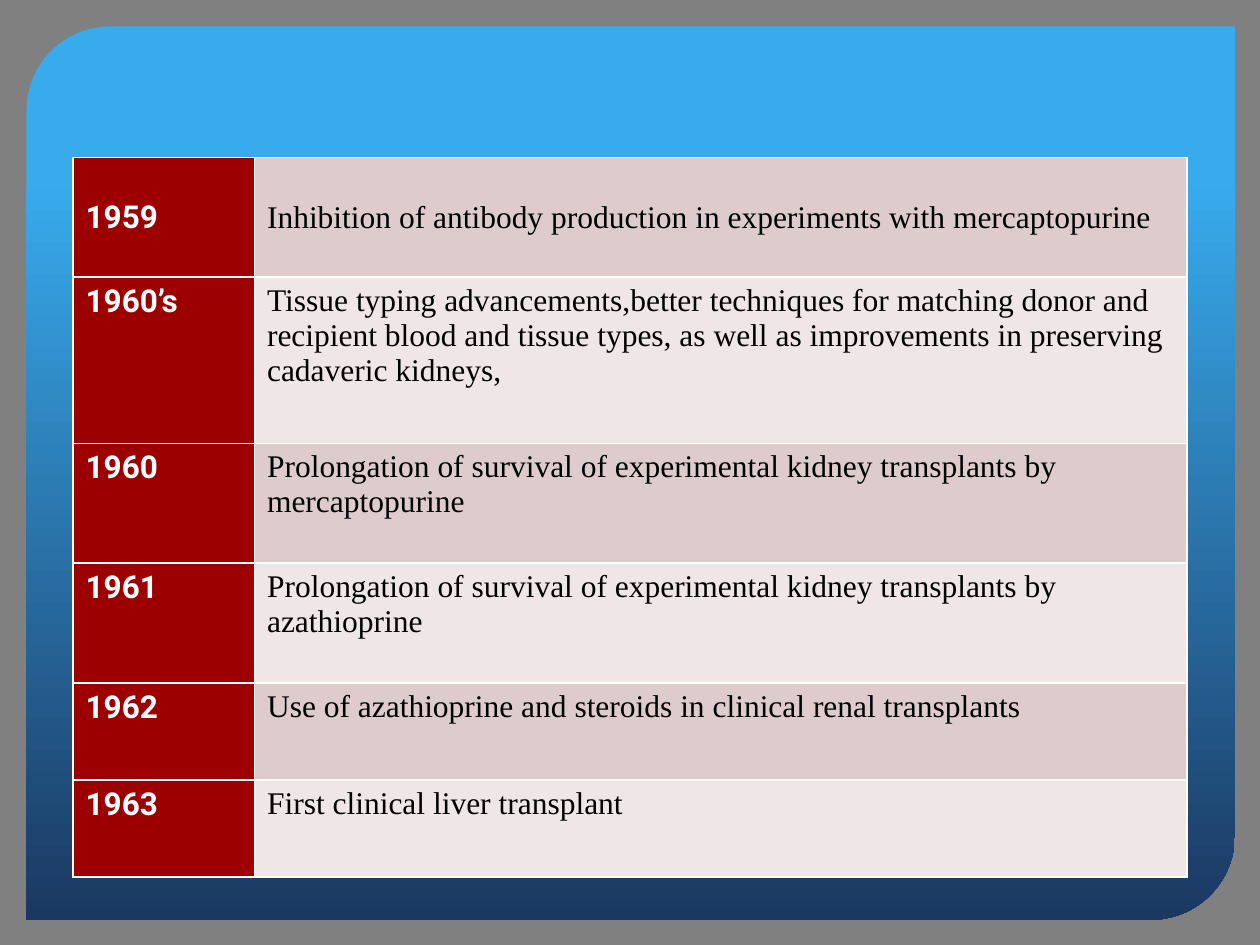
from lxml.etree import SubElement
from pptx import Presentation
from pptx.dml.color import RGBColor
from pptx.enum.shapes import MSO_SHAPE as Shape
from pptx.enum.text import MSO_ANCHOR as Anchor
from pptx.oxml.ns import qn
from pptx.util import Inches, Pt

EVENTS = [
    ("1959", "Inhibition of antibody production in experiments with mercaptopurine", 0.95),
    ("1960’s", "Tissue typing advancements,better techniques for matching donor and "
     "recipient blood and tissue types, as well as improvements in preserving "
     "cadaveric kidneys,", 1.32),
    ("1960", "Prolongation of survival of experimental kidney transplants by mercaptopurine", 0.95),
    ("1961", "Prolongation of survival of experimental kidney transplants by azathioprine", 0.95),
    ("1962", "Use of azathioprine and steroids in clinical renal transplants", 0.77),
    ("1963", "First clinical liver transplant", 0.77),
]
YEAR_WIDTH = 1.44
YEAR_FILL = "9C0001"
BAND_FILLS = ("DECCCC", "EFE7E7")


def color(value):
    return RGBColor.from_string(value)


def draw_panel(page, left, top, width, height):
    panel = page.shapes.add_shape(
        Shape.ROUND_2_DIAG_RECTANGLE,
        Inches(left), Inches(top), Inches(width), Inches(height))
    panel.shadow.inherit = False
    panel.adjustments[0] = 0.094
    panel.line.fill.background()
    panel.fill.gradient()
    panel.fill.gradient_angle = 270
    stops = panel.fill.gradient_stops
    for stop, position, shade in zip(stops, (0.17, 1), ("38ABED", "1B3861")):
        stop.position = position
        stop.color.rgb = color(shade)


def add_borders(cell):
    properties = cell._tc.get_or_add_tcPr()
    for side in ("a:lnL", "a:lnR", "a:lnT", "a:lnB"):
        line = SubElement(properties, qn(side), w=str(Pt(1)))
        SubElement(SubElement(line, qn("a:solidFill")), qn("a:srgbClr"), val="FFFFFF")


def fill_cell(cell, text, background, font_name, font_color, bold):
    add_borders(cell)
    cell.fill.solid()
    cell.fill.fore_color.rgb = color(background)
    cell.text = text
    font = cell.text_frame.paragraphs[0].font
    font.name = font_name
    font.size = Pt(18)
    font.bold = bold
    font.color.rgb = color(font_color)


def draw_timeline(page, left, top, width):
    height = sum(event[2] for event in EVENTS)
    table = page.shapes.add_table(
        len(EVENTS), 2, Inches(left), Inches(top), Inches(width), Inches(height)).table
    table.columns[0].width = Inches(YEAR_WIDTH)
    table.columns[1].width = Inches(width - YEAR_WIDTH)
    for index, (year, event, row_height) in enumerate(EVENTS):
        table.rows[index].height = Inches(row_height)
        year_cell, event_cell = table.rows[index].cells
        fill_cell(year_cell, year, YEAR_FILL, "Roboto", "FFFFFF", True)
        fill_cell(event_cell, event, BAND_FILLS[index % 2], "Times New Roman", "000000", False)
    for cell in table.rows[0].cells:
        cell.vertical_anchor = Anchor.MIDDLE


def main():
    deck = Presentation()
    deck.slide_width, deck.slide_height = Inches(10), Inches(7.5)
    page = deck.slides.add_slide(deck.slide_layouts[6])
    page.background.fill.solid()
    page.background.fill.fore_color.rgb = color("808080")
    draw_panel(page, 0.21, 0.21, 9.59, 7.09)
    draw_timeline(page, 0.58, 1.25, 8.84)
    deck.save("out.pptx")


if __name__ == "__main__":
    main()
